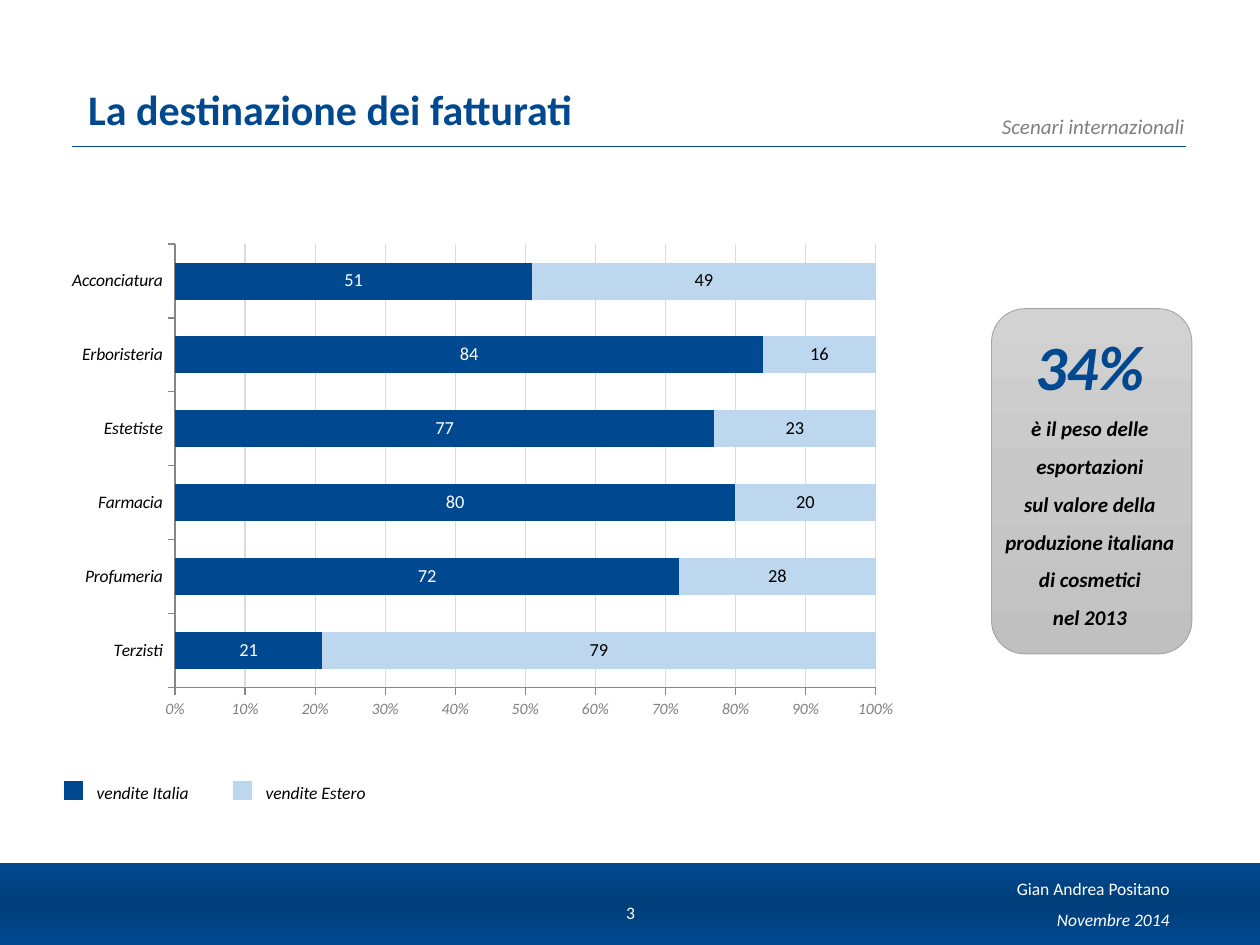
from copy import deepcopy
from dataclasses import dataclass

from lxml import etree
from pptx import Presentation
from pptx.chart.data import CategoryChartData
from pptx.dml.color import RGBColor
from pptx.enum.chart import XL_CHART_TYPE, XL_LABEL_POSITION, XL_TICK_MARK
from pptx.enum.shapes import MSO_CONNECTOR, MSO_SHAPE
from pptx.enum.text import MSO_ANCHOR, PP_ALIGN
from pptx.oxml import parse_xml
from pptx.oxml.ns import nsdecls, qn
from pptx.util import Pt

LEFT, CENTER, RIGHT = PP_ALIGN.LEFT, PP_ALIGN.CENTER, PP_ALIGN.RIGHT
TOP, MIDDLE, BOTTOM = MSO_ANCHOR.TOP, MSO_ANCHOR.MIDDLE, MSO_ANCHOR.BOTTOM
RECTANGLE, ROUNDED = MSO_SHAPE.RECTANGLE, MSO_SHAPE.ROUNDED_RECTANGLE
STRAIGHT = MSO_CONNECTOR.STRAIGHT
BAR_STACKED_100 = XL_CHART_TYPE.BAR_STACKED_100
LABEL_CENTER = XL_LABEL_POSITION.CENTER
CROSS, NO_TICK = XL_TICK_MARK.CROSS, XL_TICK_MARK.NONE
OUTSIDE = XL_TICK_MARK.OUTSIDE


@dataclass(frozen=True)
class Theme:
    font: str = "Calibri"
    blue: str = "004990"
    deep_blue: str = "003E79"
    pale_blue: str = "BDD7EE"
    black: str = "000000"
    white: str = "FFFFFF"
    gray: str = "808080"
    grid: str = "DBDBDB"
    axis: str = "868686"
    card_line: str = "A5A5A5"
    card_fill: tuple = ("D2D2D2", "C8C8C8", "C0C0C0")
    title: float = 24
    figure: float = 36
    body: float = 12
    label: float = 10.5
    small: float = 10
    tick: float = 9


class SlideBuilder:
    """Draws styled elements on one slide, with lengths in points."""

    def __init__(self, slide, theme):
        self.slide = slide
        self.theme = theme

    def style(self, font, size, color, bold=False, italic=False):
        font.name, font.size = self.theme.font, Pt(size)
        font.bold, font.italic = bold, italic
        font.color.rgb = RGBColor.from_string(color)

    def outline(self, line, color, width):
        line.color.rgb = RGBColor.from_string(color)
        line.width = Pt(width)

    def line(self, start, end, color, width):
        connector = self.slide.shapes.add_connector(STRAIGHT, *map(Pt, start + end))
        self.outline(connector.line, color, width)
        etree.SubElement(connector._element.spPr, qn("a:effectLst"))

    def shape(self, kind, box, colors, line=None):
        shape = self.slide.shapes.add_shape(kind, *map(Pt, box))
        shape.shadow.inherit = False
        if len(colors) == 1:
            shape.fill.solid()
            shape.fill.fore_color.rgb = RGBColor.from_string(colors[0])
        else:
            self.gradient(shape.fill, colors)
        if line:
            self.outline(shape.line, *line)
        else:
            shape.line.fill.background()

    def gradient(self, fill, colors):
        fill.gradient()
        fill.gradient_angle = 270
        stop_list = fill.gradient_stops[0]._gs.getparent()
        while len(stop_list) < len(colors):
            stop_list.append(deepcopy(stop_list[0]))
        for index, (stop, color) in enumerate(zip(fill.gradient_stops, colors)):
            stop.position = index / (len(colors) - 1)
            stop.color.rgb = RGBColor.from_string(color)

    def text(self, box, paragraphs, align=LEFT, anchor=TOP, insets=(7.2, 3.6),
             tab=None):
        frame = self.slide.shapes.add_textbox(*map(Pt, box)).text_frame
        frame.word_wrap, frame.vertical_anchor = True, anchor
        frame.margin_left = frame.margin_right = Pt(insets[0])
        frame.margin_top = frame.margin_bottom = Pt(insets[1])
        for index, (lines, spacing, look) in enumerate(paragraphs):
            paragraph = frame.add_paragraph() if index else frame.paragraphs[0]
            paragraph.alignment, paragraph.line_spacing = align, spacing
            if tab:
                tabs = etree.SubElement(paragraph._p.get_or_add_pPr(), qn("a:tabLst"))
                etree.SubElement(tabs, qn("a:tab"), pos=str(Pt(tab)), algn="l")
            for number, line in enumerate(lines):
                if number:
                    paragraph.add_line_break()
                run = paragraph.add_run()
                run.text = line
                self.style(run.font, **look)

    def bar_chart(self, box, categories, series_list, plot_area):
        theme = self.theme
        data = CategoryChartData()
        data.categories = categories
        for name, values, _, _ in series_list:
            data.add_series(name, values)
        chart = self.slide.shapes.add_chart(
            BAR_STACKED_100, *map(Pt, box), data).chart
        chart.has_legend = chart.has_title = False
        self.style(chart.font, theme.small, theme.black)
        plot = chart.plots[0]
        plot.gap_width, plot.overlap, plot.vary_by_categories = 100, 100, False
        for series, (_, _, fill, text) in zip(plot.series, series_list):
            series.format.fill.solid()
            series.format.fill.fore_color.rgb = RGBColor.from_string(fill)
            labels = series.data_labels
            labels.show_value, labels.position = True, LABEL_CENTER
            self.style(labels.font, theme.label, text)
        for axis, size, color in (
            (chart.category_axis, theme.small, theme.black),
            (chart.value_axis, theme.tick, theme.gray),
        ):
            axis.major_tick_mark, axis.minor_tick_mark = OUTSIDE, NO_TICK
            self.style(axis.tick_labels.font, size, color, italic=True)
            self.outline(axis.format.line, theme.axis, 0.75)
        chart.category_axis.has_major_gridlines = False
        value_axis = chart.value_axis
        value_axis.minimum_scale, value_axis.maximum_scale = 0, 1
        value_axis.major_unit = 0.1
        value_axis.tick_labels.number_format = "0%"
        value_axis.tick_labels.number_format_is_linked = False
        value_axis.has_major_gridlines = True
        self.outline(value_axis.major_gridlines.format.line, theme.grid, 0.75)
        self.place_plot(chart, plot_area)

    def place_plot(self, chart, plot_area):
        sizes = "".join(f'<c:{key} val="{value}"/>'
                        for key, value in zip("xywh", plot_area))
        layout = parse_xml(
            f'<c:layout {nsdecls("c")}><c:manualLayout><c:layoutTarget val="inner"/>'
            f'<c:xMode val="edge"/><c:yMode val="edge"/>{sizes}'
            "</c:manualLayout></c:layout>")
        area = chart._chartSpace.chart.plotArea
        for old in area.findall(qn("c:layout")):
            area.remove(old)
        area.insert(0, layout)


def main():
    presentation = Presentation()
    presentation.slide_width, presentation.slide_height = Pt(720), Pt(540)
    theme = Theme()
    builder = SlideBuilder(
        presentation.slides.add_slide(presentation.slide_layouts[6]), theme)

    footer = dict(size=theme.small, color=theme.white)
    heading = dict(size=theme.title, color=theme.blue, bold=True)
    topic = dict(size=theme.body, color=theme.gray, italic=True)
    figure = dict(size=theme.figure, color=theme.blue, bold=True, italic=True)
    message = dict(size=theme.body, color=theme.black, bold=True, italic=True)
    legend = dict(size=theme.small, color=theme.black, italic=True)

    builder.line((41, 83.6), (677.5, 83.6), theme.blue, 0.75)
    builder.text((439.2, 61.2, 244.8, 21.6),
                 [(["Scenari internazionali"], 1.0, topic)], RIGHT)
    builder.shape(RECTANGLE, (-13.7, 493.2, 741.6, 46.8),
                  (theme.blue, theme.deep_blue, theme.blue))
    builder.text((565.9, 517.7, 109.4, 15.1),
                 [(["Novembre 2014"], 1.0, dict(footer, italic=True))],
                 RIGHT, MIDDLE)
    builder.text((565.2, 499.7, 110.2, 22.3),
                 [(["Gian Andrea Positano"], 0.9, footer)], RIGHT)
    builder.text((339.8, 506.9, 41, 28.8), [(["3"], 1.0, footer)], CENTER, MIDDLE)
    builder.text((36, 7.9, 648, 68.4),
                 [(["La destinazione dei fatturati"], 1.0, heading)],
                 LEFT, BOTTOM, (14.4, 0))

    builder.bar_chart(
        (31.7, 133.9, 488.2, 281.5),
        ["Terzisti", "Profumeria", "Farmacia", "Estetiste", "Erboristeria",
         "Acconciatura"],
        [("Series 1", (21, 72, 80, 77, 84, 51), theme.blue, theme.white),
         ("Series 2", (79, 28, 20, 23, 16, 49), theme.pale_blue, theme.black)],
        (0.14, 0.02, 0.82, 0.9))

    builder.shape(ROUNDED, (566.6, 176.4, 114.5, 197.3), theme.card_fill,
                  (theme.card_line, 0.5))
    builder.text((562.3, 182.9, 121, 181.4),
                 [(["34%"], 1.0, figure),
                  (["è il peso delle esportazioni",
                    "sul valore della produzione italiana",
                    "di cosmetici", "nel 2013"], 1.5, message)], CENTER, MIDDLE)

    builder.text((48.2, 442.8, 247, 20.2),
                 [(["vendite Italia\tvendite Estero"], 1.0, legend)],
                 LEFT, MIDDLE, tab=96.5)
    for left, color in ((36, theme.blue), (132.5, theme.pale_blue)):
        builder.shape(RECTANGLE, (left, 445.7, 12.2, 12.2), (color,),
                      (theme.white, 1.5))

    presentation.save("out.pptx")


if __name__ == "__main__":
    main()
